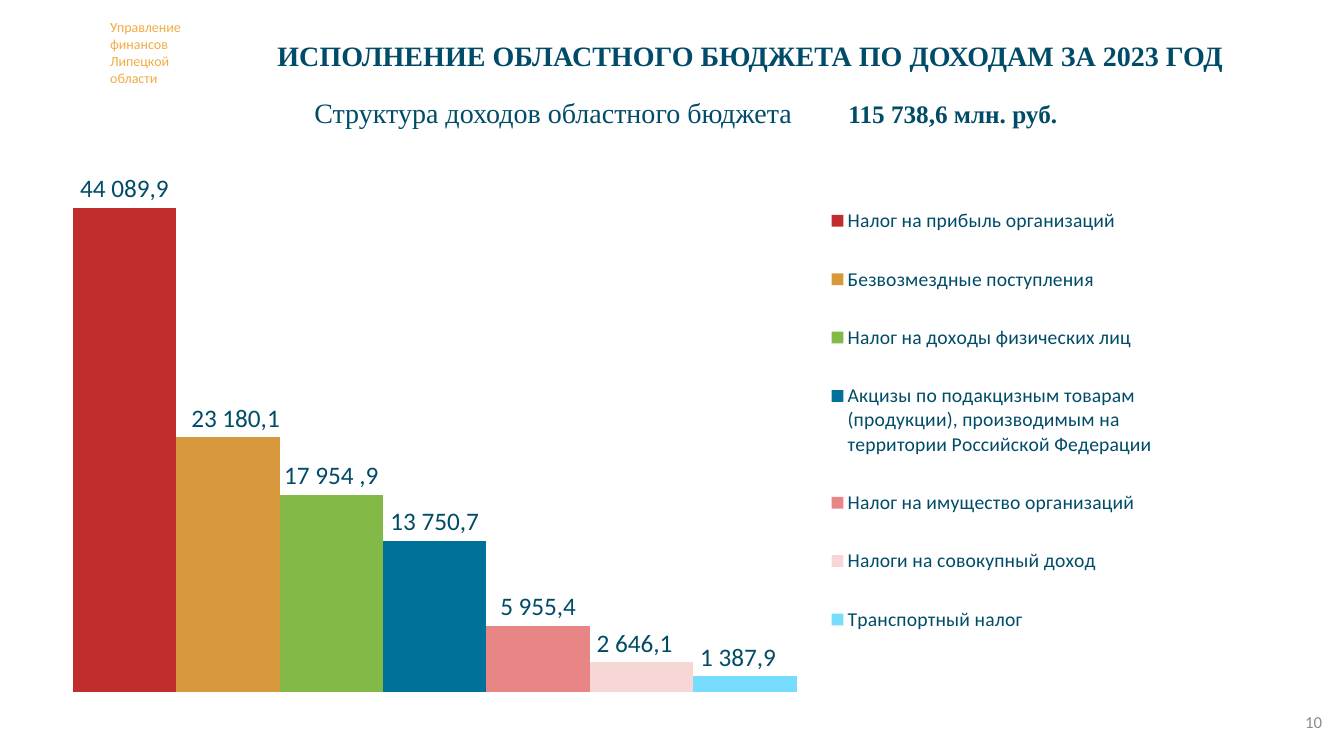
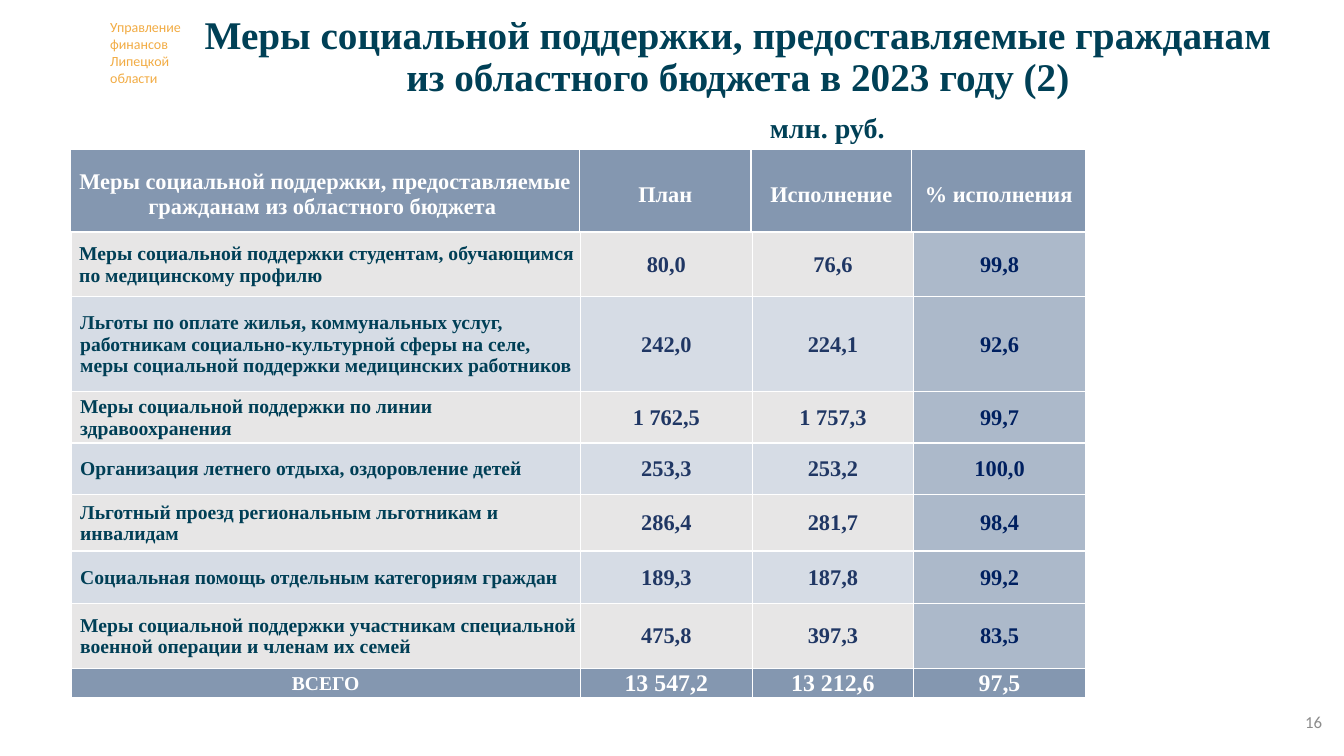
from lxml import etree
from pptx import Presentation
from pptx.chart.data import CategoryChartData
from pptx.dml.color import RGBColor
from pptx.enum.chart import XL_CHART_TYPE, XL_LABEL_POSITION, XL_LEGEND_POSITION
from pptx.enum.text import MSO_ANCHOR, MSO_AUTO_SIZE, PP_ALIGN
from pptx.oxml.ns import qn
from pptx.util import Pt

LEFT, CENTER, RIGHT = PP_ALIGN.LEFT, PP_ALIGN.CENTER, PP_ALIGN.RIGHT
TOP, MIDDLE = MSO_ANCHOR.TOP, MSO_ANCHOR.MIDDLE
COLUMNS = XL_CHART_TYPE.COLUMN_CLUSTERED
OUTSIDE_END = XL_LABEL_POSITION.OUTSIDE_END
LEGEND_RIGHT = XL_LEGEND_POSITION.RIGHT
FIXED_SIZE = MSO_AUTO_SIZE.NONE

SANS, SERIF = "Calibri", "Times New Roman"
TEAL, DARK_TEAL = "004C68", "004056"
WHITE, GRAY, AMBER = "FFFFFF", "8C8C8C", "F2AC44"
HEADER_FILL, PERCENT_FILL = "8497B0", "ACB9CA"
BAND_FILLS = ("E7E6E6", "D6DCE5")

NUMBER_FORMAT = r"#\ ##0.0"
INCOMES = [  # category, value, label, bar colour, label shift
    ("Налог на прибыль организаций", 44089.9, "44 089,9", "C12D2D", 0),
    ("Безвозмездные поступления", 23180.1, "23 180,1", "D7993C", 5.5),
    ("Налог на доходы физических лиц", 17954.9, "17 954 ,9", "82B947", 0),
    ("Акцизы по подакцизным товарам (продукции), производимым на "
     "территории Российской Федерации", 13750.7, "13 750,7", "007199", 0),
    ("Налог на имущество организаций", 5955.4, "5 955,4", "E88585", 0),
    ("Налоги на совокупный доход", 2646.1, "2 646,1", "F7D6D6", -5),
    ("Транспортный налог", 1387.9, "1 387,9", "78DCFF", -5),
]

HEADINGS = ("Меры социальной поддержки, предоставляемые гражданам из областного бюджета ",
            "План", "Исполнение", "% исполнения")
MEASURES = [
    ("Меры социальной поддержки студентам, обучающимся по медицинскому профилю",
     "80,0", "76,6", "99,8"),
    ("Льготы по оплате жилья, коммунальных услуг, работникам социально-культурной "
     "сферы на селе, меры социальной поддержки медицинских работников",
     "242,0", "224,1", "92,6"),
    ("Меры социальной поддержки по линии здравоохранения",
     "1 762,5", "1 757,3", "99,7"),
    ("Организация летнего отдыха, оздоровление детей", "253,3", "253,2", "100,0"),
    ("Льготный проезд региональным льготникам и инвалидам", "286,4", "281,7", "98,4"),
    ("Социальная помощь отдельным категориям граждан", "189,3", "187,8", "99,2"),
    ("Меры социальной поддержки участникам специальной военной операции "
     "и членам их семей", "475,8", "397,3", "83,5"),
]
TOTALS = ("ВСЕГО", "13 547,2", "13 212,6", "97,5")


def color(value):
    return RGBColor.from_string(value)


def set_font(font, size, fill, name=SERIF, bold=False):
    for attribute, value in {"size": Pt(size), "name": name, "bold": bold}.items():
        setattr(font, attribute, value)
    font.color.rgb = color(fill)


def write(paragraph, text, align=LEFT, **style):
    paragraph.alignment = align
    run = paragraph.add_run()
    run.text = text
    set_font(run.font, **style)


def place(shape, box):
    for attribute, value in zip(("left", "top", "width", "height"), box):
        setattr(shape, attribute, Pt(value))


def add_text(slide, box, text, anchor=TOP, **style):
    shape = slide.shapes.add_textbox(*map(Pt, box))
    shape.text_frame.word_wrap = True
    shape.text_frame.vertical_anchor = anchor
    write(shape.text_frame.paragraphs[0], text, **style)
    return shape


# Shared frame of the slides
def add_department(slide):
    """Puts the department name on the master, so every slide shows it."""
    shape = add_text(slide, (71.6, 10, 70, 55.5), "Управление финансов Липецкой области",
                     size=10, fill=AMBER, name=SANS)
    master = slide.slide_layout.slide_master
    master.shapes._spTree.append(shape._element)


def add_titled_slide(presentation, title, box, number, **style):
    slide = presentation.slides.add_slide(presentation.slide_layouts[5])
    place(slide.shapes.title, box)
    frame = slide.shapes.title.text_frame
    for attribute, value in {"word_wrap": True, "auto_size": FIXED_SIZE,
                             "vertical_anchor": MIDDLE}.items():
        setattr(frame, attribute, value)
    frame.paragraphs[0].line_spacing = 0.9
    write(frame.paragraphs[0], title, CENTER, bold=True, **style)
    add_text(slide, (727.5, 501, 224, 29), str(number), MIDDLE, align=RIGHT,
             size=12, fill=GRAY, name=SANS)
    return slide


# Chart
def set_layout(element, index, values):
    """Fixes the place of a chart part."""
    for old in element.findall(qn("c:layout")):
        element.remove(old)
    layout = etree.Element(qn("c:layout"))
    element.insert(index, layout)
    manual = etree.SubElement(layout, qn("c:manualLayout"))
    for tag, value in values.items():
        etree.SubElement(manual, qn("c:" + tag)).set("val", str(value))


def edge_layout(part, chart_box):
    """Turns a box in points inside the chart into fractions of the chart."""
    width, height = chart_box[2:]
    fractions = [length / whole for length, whole in zip(part, (width, height) * 2)]
    return {"xMode": "edge", "yMode": "edge", **dict(zip("xywh", fractions))}


def add_income_chart(slide, box):
    data = CategoryChartData(number_format=NUMBER_FORMAT)
    data.categories = [income[0] for income in INCOMES]
    data.add_series("Series 1", [income[1] for income in INCOMES])
    chart = slide.shapes.add_chart(COLUMNS, *map(Pt, box), data).chart
    chart.has_title = False
    set_font(chart.font, 18, "000000", SANS)

    # Hidden axes
    chart.category_axis.visible = False
    for attribute, value in {"visible": False, "has_major_gridlines": False,
                             "minimum_scale": 0, "maximum_scale": 45000,
                             "major_unit": 3000}.items():
        setattr(chart.value_axis, attribute, value)
    chart.value_axis.tick_labels.number_format = NUMBER_FORMAT
    chart.value_axis.tick_labels.number_format_is_linked = False

    # Bars and their labels
    plot = chart.plots[0]
    plot.vary_by_categories = True
    plot.gap_width = 0
    labels = plot.series[0].data_labels
    for attribute, value in {"show_value": True, "number_format": NUMBER_FORMAT,
                             "number_format_is_linked": False,
                             "position": OUTSIDE_END}.items():
        setattr(labels, attribute, value)
    set_font(labels.font, 18, TEAL, SANS)
    for index, (_, _, text, fill, shift) in enumerate(INCOMES):
        point = plot.series[0].points[index]
        point.format.fill.solid()
        point.format.fill.fore_color.rgb = color(fill)
        label = point.data_label
        label.text_frame.word_wrap = False
        write(label.text_frame.paragraphs[0], text, CENTER, size=18, fill=TEAL, name=SANS)
        label.position = OUTSIDE_END
        if shift:
            set_layout(label._get_or_add_dLbl(), 1, {"x": shift / box[2], "y": 0})

    # Legend
    chart.has_legend = True
    chart.legend.position = LEGEND_RIGHT
    chart.legend.include_in_layout = False
    set_font(chart.legend.font, 14, TEAL, SANS)
    set_layout(chart._chartSpace.chart.plotArea, 0,
               {"layoutTarget": "inner",
                **edge_layout((16, 31.3, 517.2, 352.5), box)})
    set_layout(chart.legend._element, 1, edge_layout((553.5, 14.5, 238, 351), box))


def add_income_total(slide, box):
    shape = add_text(slide, box, "Структура доходов областного бюджета\t",
                     size=20, fill=TEAL)
    paragraph = shape.text_frame.paragraphs[0]
    tabs = etree.SubElement(paragraph._p.get_or_add_pPr(), qn("a:tabLst"))
    etree.SubElement(tabs, qn("a:tab"), pos=str(Pt(381.5)), algn="l")
    write(paragraph, "115 738,6 млн. руб.", size=18, fill=TEAL, bold=True)


# Tables
def fill_cell(cell, text, background, margin=0.7, **style):
    borders = cell._tc.get_or_add_tcPr()
    for side in ("lnL", "lnR", "lnT", "lnB"):
        line = etree.SubElement(borders, qn("a:" + side), w=str(Pt(1)))
        solid = etree.SubElement(line, qn("a:solidFill"))
        etree.SubElement(solid, qn("a:srgbClr"), val=WHITE)
    cell.fill.solid()
    cell.fill.fore_color.rgb = color(background)
    for attribute, value in {"margin_left": Pt(margin), "margin_right": Pt(0.7),
                             "margin_top": Pt(0.7), "margin_bottom": 0,
                             "vertical_anchor": MIDDLE}.items():
        setattr(cell, attribute, value)
    write(cell.text_frame.paragraphs[0], text, bold=True, **style)


def add_grid(slide, left, top, widths, heights):
    shape = slide.shapes.add_table(len(heights), len(widths), Pt(left), Pt(top),
                                   Pt(sum(widths)), Pt(sum(heights)))
    table = shape.table
    table.first_row = table.horz_banding = False
    for column, width in zip(table.columns, widths):
        column.width = Pt(width)
    for row, height in zip(table.rows, heights):
        row.height = Pt(height)
    return table


def add_heading_table(slide, left, top):
    table = add_grid(slide, left, top, (363.6, 122.4, 114.8, 124.4), (64,))
    for column, text in enumerate(HEADINGS):
        fill_cell(table.cell(0, column), text, HEADER_FILL,
                  align=CENTER, size=16, fill=WHITE)


def add_measures_table(slide, left, top):
    heights = (46, 68, 36.8, 36.8, 40.3, 37.4, 46.4, 20.5)
    table = add_grid(slide, left, top, (363.6, 123.1, 115, 123.1), heights)
    for row, (name, *amounts, percent) in enumerate(MEASURES):
        band = BAND_FILLS[row % 2]
        fill_cell(table.cell(row, 0), name, band, 6.5 if row else 5.8,
                  size=14, fill="003F56")
        for column, amount in enumerate(amounts, 1):
            fill_cell(table.cell(row, column), amount, band,
                      align=CENTER, size=16, fill="203764")
        fill_cell(table.cell(row, 3), percent, PERCENT_FILL,
                  align=CENTER, size=16, fill="002060")
    for column, text in enumerate(TOTALS):
        fill_cell(table.cell(len(MEASURES), column), text, HEADER_FILL,
                  align=CENTER, size=17 if column else 14, fill=WHITE)


# Slides
def build_income_slide(presentation):
    slide = add_titled_slide(
        presentation, "ИСПОЛНЕНИЕ ОБЛАСТНОГО БЮДЖЕТА ПО ДОХОДАМ ЗА 2023 ГОД",
        (132, 18, 807.8, 46), 10, size=20, fill=TEAL)
    add_income_chart(slide, (36, 110.2, 792.7, 391))
    add_income_total(slide, (217.4, 64.4, 574.6, 31.5))
    return slide


def build_support_slide(presentation):
    slide = add_titled_slide(
        presentation, "Меры социальной поддержки, предоставляемые гражданам "
        "из областного бюджета в 2023 году (2)",
        (132.5, 11.8, 789, 59), 16, size=28, fill=DARK_TEAL)
    add_heading_table(slide, 50.4, 106.6)
    add_text(slide, (542.8, 75.4, 144, 31.5), "млн. руб.", size=20, fill=DARK_TEAL, bold=True)
    add_measures_table(slide, 50.8, 165.7)


def main():
    presentation = Presentation()
    presentation.slide_width, presentation.slide_height = Pt(960), Pt(540)
    add_department(build_income_slide(presentation))
    build_support_slide(presentation)
    presentation.save("out.pptx")


if __name__ == "__main__":
    main()
